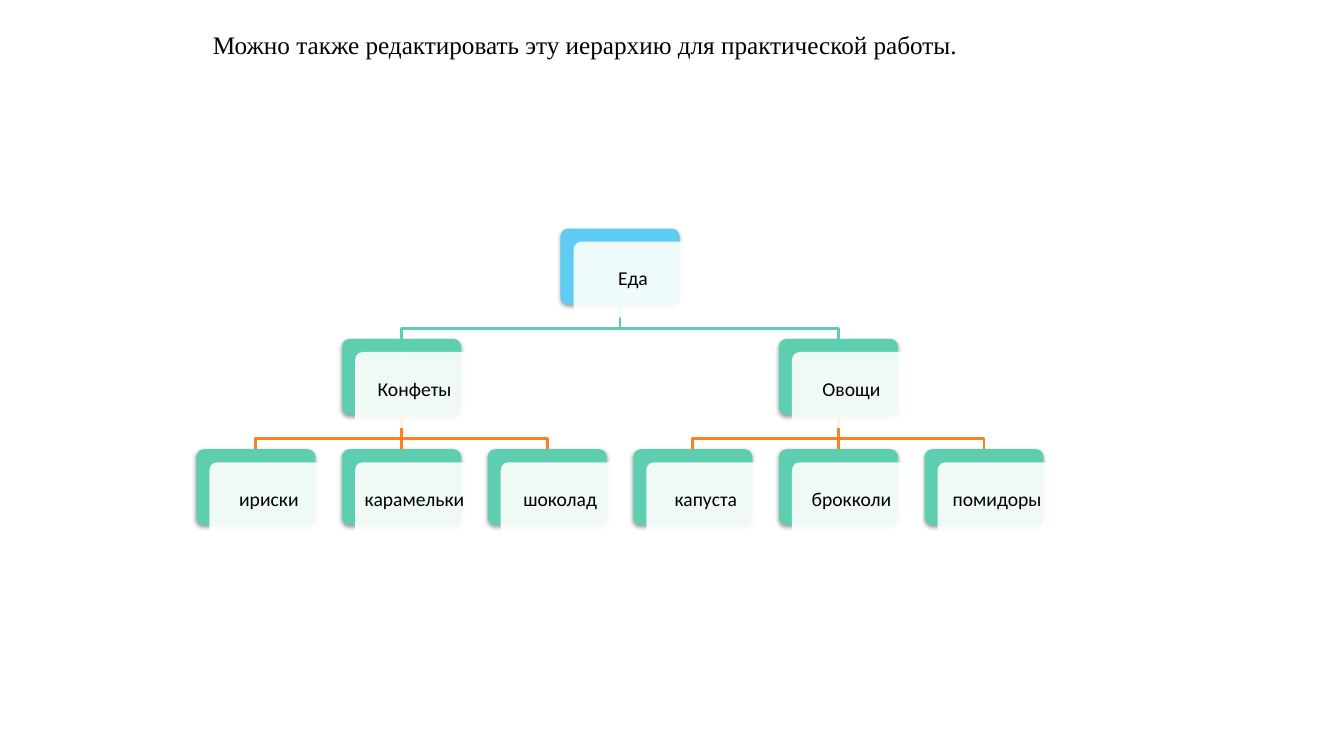
from lxml import etree
from pptx import Presentation
from pptx import util as u
from pptx.dml.color import RGBColor
from pptx.enum import shapes, text
from pptx.oxml import ns

BLUE = RGBColor(0x5E, 0xCC, 0xF3)
GREEN = RGBColor(0x5D, 0xCE, 0xAF)
ORANGE = RGBColor(0xFF, 0x80, 0x21)
WHITE = RGBColor(0xFF, 0xFF, 0xFF)
BLACK = RGBColor(0, 0, 0)

LEFT, TOP = 4.95, 5.76
COL_STEP, ROW_STEP = 3.67, 2.78
BOX_W, BOX_H = 3.0, 1.91
PANEL_SHIFT, BEND = 0.33, 0.6

NODES = {
    "Еда": (2.5, 0, None),
    "Конфеты": (1, 1, "Еда"),
    "Овощи": (4, 1, "Еда"),
    "ириски": (0, 2, "Конфеты"),
    "карамельки": (1, 2, "Конфеты"),
    "шоколад": (2, 2, "Конфеты"),
    "капуста": (3, 2, "Овощи"),
    "брокколи": (4, 2, "Овощи"),
    "помидоры": (5, 2, "Овощи"),
}


class HierarchySlide:
    """Draws the parts of a hierarchy on one slide in a shared style."""

    def __init__(self, prs):
        self.s = prs.slides.add_slide(prs.slide_layouts[5])
        self.label_font, self.title_font = "Calibri", "Times New Roman"

    def set_text(self, tf, words, font, size, align, spacing):
        tf.text = words
        p = tf.paragraphs[0]
        p.alignment, p.line_spacing = align, spacing
        f = p.runs[0].font
        f.name, f.size, f.color.rgb = font, u.Pt(size), BLACK
        return p

    def title(self, words, x, y, w, h):
        sp = self.s.shapes.title
        sp.left, sp.top, sp.width, sp.height = map(u.Cm, (x, y, w, h))
        tf = sp.text_frame
        tf.word_wrap, tf.auto_size = True, text.MSO_AUTO_SIZE.NONE
        tf.vertical_anchor = text.MSO_ANCHOR.TOP
        p = self.set_text(tf, words, self.title_font, 18, text.PP_ALIGN.JUSTIFY, 1.07)
        p._p.get_or_add_pPr().set("indent", str(u.Cm(1.25)))

    def rounded(self, x, y, color):
        sp = self.s.shapes.add_shape(shapes.MSO_SHAPE.ROUNDED_RECTANGLE,
                                     *map(u.Cm, (x, y, BOX_W, BOX_H)))
        sp.adjustments[0] = 0.1
        sp.fill.solid()
        sp.fill.fore_color.rgb = color
        sp.line.fill.background()
        sp.shadow.inherit = False
        return sp

    def back(self, x, y, color):
        sp = self.rounded(x, y, color)
        effects = sp._element.spPr.find(ns.qn("a:effectLst"))
        shadow = etree.SubElement(effects, ns.qn("a:outerShdw"), blurRad="40000",
                                  dist="20000", dir="5400000", rotWithShape="0")
        clr = etree.SubElement(shadow, ns.qn("a:srgbClr"), val="000000")
        etree.SubElement(clr, ns.qn("a:alpha"), val="38000")
        return sp

    def panel(self, words, back):
        sp = self.rounded(back.left.cm + PANEL_SHIFT, back.top.cm + PANEL_SHIFT, WHITE)
        clr = sp._element.spPr.find(".//" + ns.qn("a:srgbClr"))
        etree.SubElement(clr, ns.qn("a:alpha"), val="90000")
        tf = sp.text_frame
        tf.word_wrap, tf.vertical_anchor = True, text.MSO_ANCHOR.MIDDLE
        tf.margin_left = tf.margin_right = tf.margin_top = tf.margin_bottom = u.Cm(0.15)
        self.set_text(tf, words, self.label_font, 14, text.PP_ALIGN.CENTER, 0.9)

    def link(self, parent, child, color):
        x1, y1 = parent.left + parent.width // 2, parent.top + parent.height
        x2, y2 = child.left + child.width // 2, child.top
        if x1 == x2:
            line = self.s.shapes.add_connector(shapes.MSO_CONNECTOR.STRAIGHT, x1, y1, x2, y2)
            line.begin_connect(parent, 2)
            line.end_connect(child, 0)
        else:
            bend = y1 + u.Cm(BEND)
            fb = self.s.shapes.build_freeform(x1, y1)
            fb.add_line_segments([(x1, bend), (x2, bend), (x2, y2)], close=False)
            line = fb.convert_to_shape()
            line.fill.background()
        line.line.color.rgb, line.line.width = color, u.Pt(2)
        etree.SubElement(line._element.spPr, ns.qn("a:effectLst"))


def main():
    prs = Presentation()
    prs.slide_width, prs.slide_height = u.Cm(33.87), u.Cm(19.05)
    slide = HierarchySlide(prs)
    slide.title("Можно также редактировать эту иерархию для практической работы.",
                3.86, 0.56, 20.78, 1.09)
    backs = {name: slide.back(LEFT + col * COL_STEP, TOP + row * ROW_STEP,
                              GREEN if row else BLUE)
             for name, (col, row, _) in NODES.items()}
    for name, (_, row, parent) in NODES.items():
        if parent:
            slide.link(backs[parent], backs[name], GREEN if row == 1 else ORANGE)
    for name, back in backs.items():
        slide.panel(name, back)
    prs.save("out.pptx")


if __name__ == "__main__":
    main()
